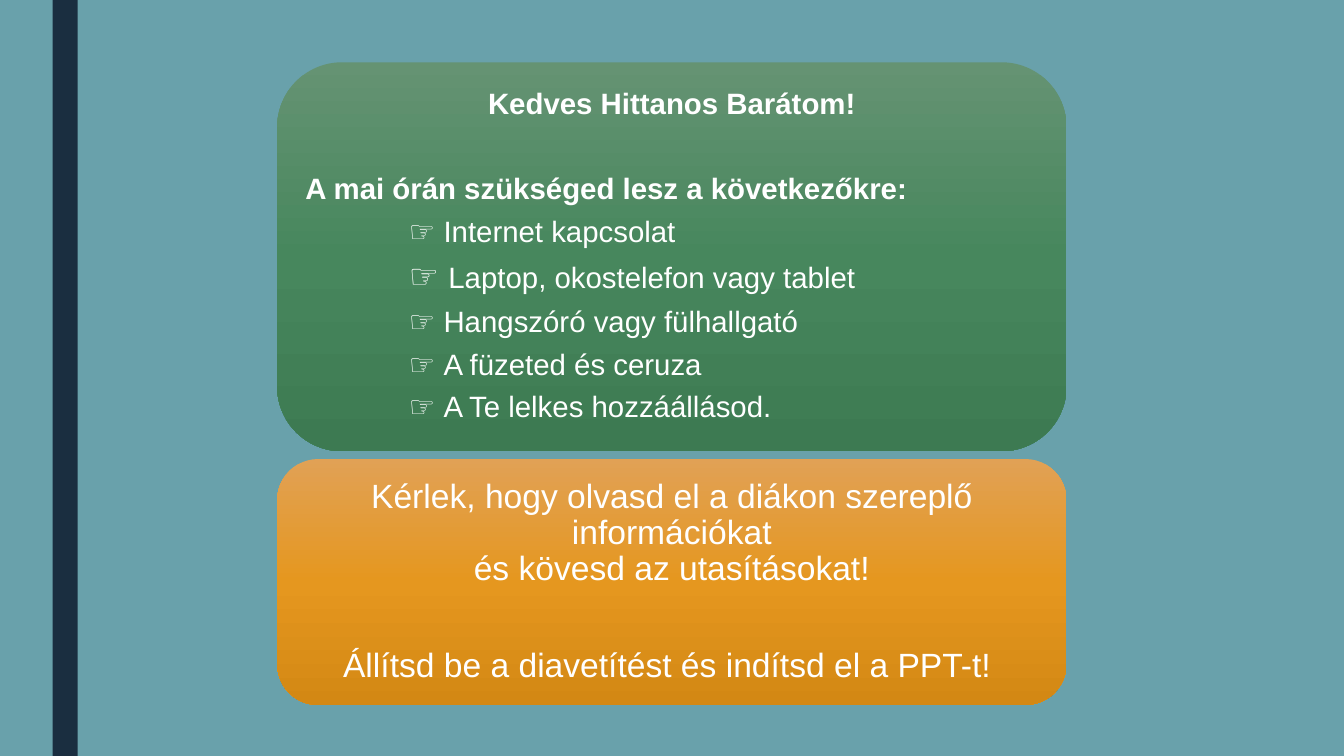
from copy import deepcopy
from dataclasses import dataclass

from pptx import Presentation
from pptx.dml.color import RGBColor
from pptx.enum.shapes import MSO_SHAPE
from pptx.enum.text import MSO_ANCHOR, PP_ALIGN
from pptx.oxml.ns import qn
from pptx.util import Pt


@dataclass(frozen=True)
class Theme:
    font: str = "Arial"
    background: str = "69A1AB"
    stripe: str = "1A2E40"
    text: str = "FFFFFF"
    green: tuple = ("659373", "47875D", "3D7A52")
    orange: tuple = ("E1A155", "E5971F", "D38814")
    list_size: float = 21
    message_size: float = 24
    line_spacing: float = 0.9
    list_gap: float = 7.9
    list_break: float = 37.9
    message_gap: float = 9
    message_break: float = 43.3
    list_indent: float = 74


def apply(target, values):
    for name, value in values.items():
        setattr(target, name, value)


class SlideBuilder:
    def __init__(self, page, theme):
        self.page = page
        self.theme = theme

    def background(self):
        fill = self.page.background.fill
        fill.solid()
        fill.fore_color.rgb = RGBColor.from_string(self.theme.background)

    def shape(self, kind, left, top, width, height):
        box = self.page.shapes.add_shape(kind, Pt(left), Pt(top), Pt(width), Pt(height))
        box.shadow.inherit = False
        box.line.fill.background()
        return box

    def stripe(self, left, width, height):
        box = self.shape(MSO_SHAPE.RECTANGLE, left, 0, width, height)
        box.fill.solid()
        box.fill.fore_color.rgb = RGBColor.from_string(self.theme.stripe)

    def panel(self, top, height, colors, inset):
        box = self.shape(MSO_SHAPE.ROUNDED_RECTANGLE, 198, top, 563.8, height)
        box.fill.gradient()
        box.fill.gradient_angle = 270
        stops = box._element.spPr.find(qn("a:gradFill")).find(qn("a:gsLst"))
        stops.insert(1, deepcopy(stops[0]))
        for index, (stop, color) in enumerate(zip(box.fill.gradient_stops, colors)):
            apply(stop, {"position": index / (len(colors) - 1)})
            stop.color.rgb = RGBColor.from_string(color)
        sides = ("left", "top", "right", "bottom")
        apply(box.text_frame, {f"margin_{side}": Pt(inset) for side in sides})
        apply(box.text_frame, {"word_wrap": True, "vertical_anchor": MSO_ANCHOR.MIDDLE})
        return box.text_frame

    def paragraph(self, frame, spans, size, gap, align=PP_ALIGN.LEFT, indent=0):
        first = frame.paragraphs[0]
        para = frame.add_paragraph() if first.runs else first
        para.font.size = Pt(size)
        apply(para, {"alignment": align, "line_spacing": self.theme.line_spacing,
                     "space_before": Pt(0), "space_after": Pt(gap)})
        if indent:
            properties = para._p.get_or_add_pPr()
            properties.set("marL", str(Pt(indent)))
            properties.set("indent", "0")
        for text, bold, span_size in spans:
            for index, line in enumerate(text.split("\n")):
                if index:
                    para.add_line_break()
                span = para.add_run()
                span.text = line
                apply(span.font, {"name": self.theme.font, "size": Pt(span_size), "bold": bold})
                span.font.color.rgb = RGBColor.from_string(self.theme.text)


def main():
    theme = Theme()
    deck = Presentation()
    apply(deck, {"slide_width": Pt(960), "slide_height": Pt(540)})
    slide = SlideBuilder(deck.slides.add_slide(deck.slide_layouts[6]), theme)
    slide.background()
    slide.stripe(37.5, 18, 540)

    size = theme.list_size
    checklist = slide.panel(44.5, 277.8, theme.green, 6.6)
    slide.paragraph(checklist, [("Kedves Hittanos Barátom!", True, size)],
                    size, theme.list_break, PP_ALIGN.CENTER)
    slide.paragraph(checklist, [("A mai órán szükséged lesz a következőkre:", True, size)],
                    size, theme.list_gap)
    needs = [
        ("Internet kapcsolat", size),
        ("Laptop, okostelefon vagy tablet", theme.message_size),
        ("Hangszóró vagy fülhallgató", size),
        ("A füzeted és ceruza", size),
        ("A Te lelkes hozzáállásod.", size),
    ]
    for need, marker_size in needs:
        slide.paragraph(checklist, [("☞ ", True, marker_size), (need, False, size)],
                        size, theme.list_gap, indent=theme.list_indent)

    size = theme.message_size
    message = slide.panel(327.9, 175.7, theme.orange, 7.2)
    requests = [
        ("Kérlek, hogy olvasd el a diákon szereplő információkat\nés kövesd az utasításokat!",
         theme.message_break),
        ("Állítsd be a diavetítést és indítsd el a PPT-t! ", theme.message_gap),
    ]
    for request, gap in requests:
        slide.paragraph(message, [(request, False, size)], size, gap, PP_ALIGN.CENTER)

    deck.save("out.pptx")


if __name__ == "__main__":
    main()
